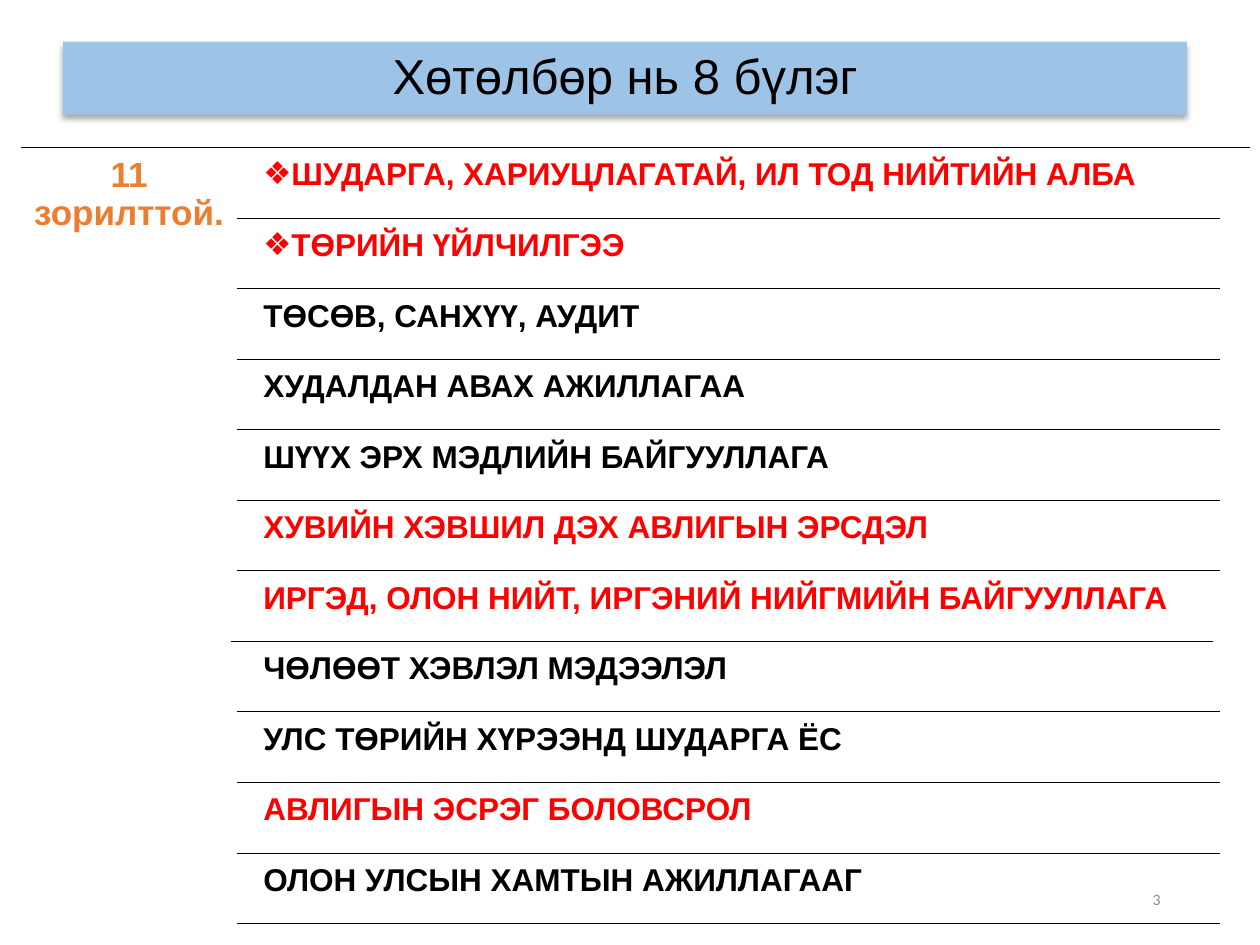
from lxml.etree import SubElement as Sub
from pptx import Presentation
from pptx.dml.color import RGBColor
from pptx.enum.shapes import MSO_CONNECTOR as Conn
from pptx.enum.text import MSO_ANCHOR as Anchor, MSO_AUTO_SIZE as Auto, PP_ALIGN as Align
from pptx.oxml.ns import qn
from pptx.util import Inches, Pt

RED, BLACK = "FF0000", "000000"


def tint(color, code):
    color.rgb = RGBColor.from_string(code)


def write(box, text, size, code, bold=False, face="Arial", align=Align.LEFT,
          anchor=Anchor.TOP, pad=None):
    frame = box.text_frame
    frame.word_wrap = True
    frame.auto_size = Auto.NONE
    frame.vertical_anchor = anchor
    if pad is not None:
        frame.margin_left = frame.margin_right = Inches(pad)
        frame.margin_top = frame.margin_bottom = Inches(pad)
    para = frame.paragraphs[0]
    para.alignment = align
    para.line_spacing = 0.9
    run = para.add_run()
    run.text = text
    run.font.size = Pt(size)
    run.font.name = face
    run.font.bold = bold
    tint(run.font.color, code)
    return para


deck = Presentation()
deck.slide_width, deck.slide_height = Inches(10), Inches(7.5)
slide = deck.slides.add_slide(deck.slide_layouts[5])
shapes = slide.shapes

title = shapes.title
title.left, title.top = Inches(0.5), Inches(0.33)
title.width, title.height = Inches(8.92), Inches(0.58)
title.fill.solid()
tint(title.fill.fore_color, "9DC3E6")
write(title, "Хөтөлбөр нь 8 бүлэг", 28, BLACK, align=Align.CENTER, anchor=Anchor.MIDDLE)
glow = Sub(title.element.spPr, qn("a:effectLst"))
shade = Sub(glow, qn("a:outerShdw"), blurRad=str(Pt(3.5)), dist=str(Pt(2.2)),
            dir="5400000", algn="t", rotWithShape="0")
Sub(Sub(shade, qn("a:srgbClr"), val=BLACK), qn("a:alpha"), val="32000")

page = shapes.add_textbox(Inches(7.06), Inches(6.95), Inches(2.25), Inches(0.4))
write(page, "3", 9, "8C8C8C", face="Calibri", align=Align.RIGHT, anchor=Anchor.MIDDLE)

side = shapes.add_textbox(Inches(0.17), Inches(1.17), Inches(1.71), Inches(6.18))
write(side, "11 зорилттой.", 20, "ED7D31", bold=True, align=Align.CENTER, pad=0.08)

goals = [
    ("ШУДАРГА, ХАРИУЦЛАГАТАЙ, ИЛ ТОД НИЙТИЙН АЛБА", RED, True),
    ("ТӨРИЙН ҮЙЛЧИЛГЭЭ", RED, True),
    ("ТӨСӨВ, САНХҮҮ, АУДИТ", BLACK, False),
    ("ХУДАЛДАН АВАХ АЖИЛЛАГАА", BLACK, False),
    ("ШҮҮХ ЭРХ МЭДЛИЙН БАЙГУУЛЛАГА", BLACK, False),
    ("ХУВИЙН ХЭВШИЛ ДЭХ АВЛИГЫН ЭРСДЭЛ", RED, False),
    ("ИРГЭД, ОЛОН НИЙТ, ИРГЭНИЙ НИЙГМИЙН БАЙГУУЛЛАГА", RED, False),
    ("ЧӨЛӨӨТ ХЭВЛЭЛ МЭДЭЭЛЭЛ", BLACK, False),
    ("УЛС ТӨРИЙН ХҮРЭЭНД ШУДАРГА ЁС", BLACK, False),
    ("АВЛИГЫН ЭСРЭГ БОЛОВСРОЛ", RED, False),
    ("ОЛОН УЛСЫН ХАМТЫН АЖИЛЛАГААГ", BLACK, False),
]
step = 0.56
rules = [(0.17, 1.17, 9.75)]
for i, (text, code, mark) in enumerate(goals):
    goal = shapes.add_textbox(Inches(2.02), Inches(1.19 + i * step), Inches(7.65), Inches(0.53))
    para = write(goal, text, 18, code, bold=True, pad=0.07)
    if mark:
        props = para._p.get_or_add_pPr()
        props.set("marL", "0")
        props.set("indent", "0")
        Sub(props, qn("a:buFont"), typeface="Arial")
        Sub(props, qn("a:buChar"), char="❖")
    rules.append((1.83 if i == 6 else 1.88, 1.73 + i * step, 7.8))

for left, top, width in rules:
    rule = shapes.add_connector(Conn.STRAIGHT, Inches(left), Inches(top),
                                Inches(left + width), Inches(top))
    rule.line.width = Pt(0.5)
    tint(rule.line.color, BLACK)
    Sub(rule._element.spPr, qn("a:effectLst"))

deck.save("out.pptx")
